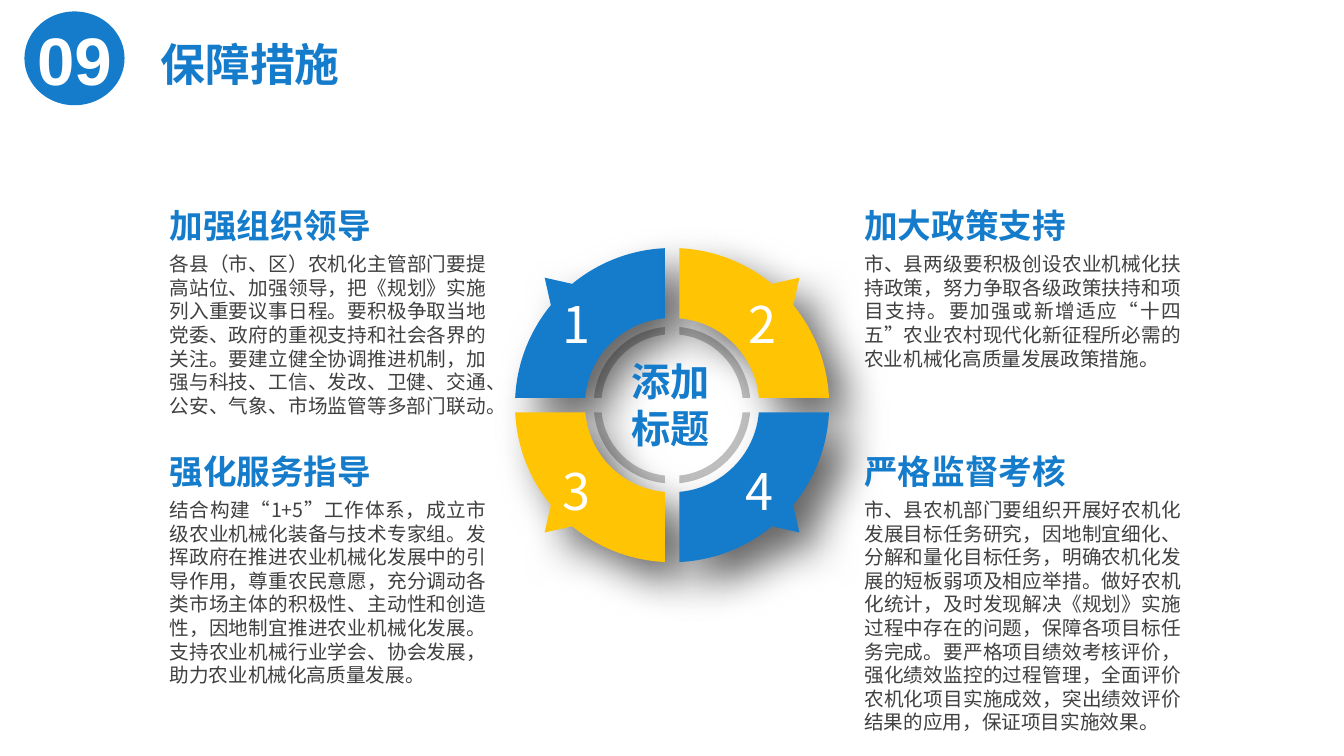
from math import acos, asin, cos, radians, sin, tan

from lxml import etree
from pptx import Presentation
from pptx import util as u
from pptx.dml.color import RGBColor
from pptx.enum import shapes, text
from pptx.oxml import ns

BLUE = RGBColor(0x15, 0x7C, 0xCB)
YELLOW = RGBColor(0xFF, 0xC4, 0x04)
GREY = RGBColor(0xBF, 0xBF, 0xBF)
INK = RGBColor(0x40, 0x40, 0x40)
WHITE = RGBColor(0xFF, 0xFF, 0xFF)
CJK = "Noto Sans CJK SC"

CENTRE_X, CENTRE_Y = 480.1, 289.4
HALF_GAP = 5.2


def write(tf, words, size, color, font=CJK, bold=False, align=text.PP_ALIGN.LEFT,
          anchor=text.MSO_ANCHOR.TOP, wrap=True, insets=(7.2, 3.6)):
    """Put one formatted paragraph into a text frame."""
    tf.word_wrap = wrap
    tf.auto_size = text.MSO_AUTO_SIZE.NONE
    tf.vertical_anchor = anchor
    tf.margin_left = tf.margin_right = u.Pt(insets[0])
    tf.margin_top = tf.margin_bottom = u.Pt(insets[1])
    p = tf.paragraphs[0]
    p.alignment = align
    p.line_spacing = u.Pt(round(size * 1.204, 2))
    r = p.add_run()
    r.text = words
    r.font.name, r.font.size, r.font.bold = font, u.Pt(size), bold
    r.font.color.rgb = color
    ea = etree.SubElement(r.font._element, ns.qn("a:ea"))
    ea.set("typeface", font)


def quarter(sx, sy, outer, inner, tip=None):
    """Steps of one ring quarter: one point is a line, three points are a curve."""
    def on(radius, angle):
        return radius * cos(angle), radius * sin(angle)

    def arc(radius, start, end):
        k = 4 / 3 * tan((end - start) / 4)
        (x1, y1), (x2, y2) = on(radius, start), on(radius, end)
        return [(x1 - k * y1, y1 + k * x1), (x2 + k * y2, y2 - k * x2), (x2, y2)]

    first, last = asin(HALF_GAP / outer), acos(HALF_GAP / outer)
    steps = [[on(outer, first)]]
    if tip:
        low, high = radians(39.5), radians(50.5)
        steps += [arc(outer, first, low), [(tip, tip)], [on(outer, high)],
                  arc(outer, high, last)]
    else:
        steps.append(arc(outer, first, last))
    first, last = asin(HALF_GAP / inner), acos(HALF_GAP / inner)
    steps += [[on(inner, last)], arc(inner, last, first)]
    return [[(u.Pt(CENTRE_X + sx * x), u.Pt(CENTRE_Y + sy * y)) for x, y in step]
            for step in steps]


class Deck:
    def __init__(self, prs, s):
        self.prs, self.s = prs, s

    def paint(self, sp, color):
        sp.fill.solid()
        sp.fill.fore_color.rgb = color
        sp.line.fill.background()
        sp.shadow.inherit = False

    def shape(self, kind, x, y, w, h, color):
        sp = self.s.shapes.add_shape(kind, *map(u.Pt, (x, y, w, h)))
        self.paint(sp, color)
        return sp

    def title(self, words, x, y, w, h):
        sp = self.s.shapes.title
        sp.left, sp.top, sp.width, sp.height = map(u.Pt, (x, y, w, h))
        write(sp.text_frame, words, 32, BLUE, bold=True)

    def label(self, words, x, y, w, h, size, color, **fmt):
        sp = self.s.shapes.add_textbox(*map(u.Pt, (x, y, w, h)))
        write(sp.text_frame, words, size, color, **fmt)

    def panel(self, x, y, w, h):
        sp = self.shape(shapes.MSO_SHAPE.RECTANGLE, x, y, w, h, WHITE)
        white = sp._element.spPr.find(".//" + ns.qn("a:srgbClr"))
        etree.SubElement(white, ns.qn("a:alpha"), val="88000")

    def badge(self, words, x, y, w, h):
        sp = self.shape(shapes.MSO_SHAPE.OVAL, x, y, w, h, BLUE)
        write(sp.text_frame, words, 48, WHITE, font="Arial", bold=True, wrap=False,
              align=text.PP_ALIGN.CENTER, anchor=text.MSO_ANCHOR.MIDDLE, insets=(0, 0))

    def outline(self, contours, color):
        builder = self.s.shapes.build_freeform(*contours[0][0][0])
        for i, steps in enumerate(contours):
            if i:
                builder.move_to(*steps[0][0])
            builder.add_line_segments([pt for step in steps[1:] for pt in step], close=True)
        sp = builder.convert_to_shape()
        self.paint(sp, color)
        # Join each run of three points into a curve
        lines = iter(list(sp._element.spPr.iter(ns.qn("a:lnTo"))))
        for step in (step for steps in contours for step in steps[1:]):
            group = [next(lines) for _ in step]
            if len(group) == 3:
                group[0].tag = ns.qn("a:cubicBezTo")
                for line in group[1:]:
                    group[0].append(line[0])
                    line.getparent().remove(line)
        return sp

    def cast_shadow(self, sp):
        effects = sp._element.spPr.find(ns.qn("a:effectLst"))
        shadow = etree.SubElement(effects, ns.qn("a:outerShdw"), blurRad=str(u.Pt(30)),
                                  dist=str(u.Pt(20)), dir="2700000", algn="tl",
                                  rotWithShape="0")
        black = etree.SubElement(shadow, ns.qn("a:srgbClr"), val="000000")
        etree.SubElement(black, ns.qn("a:alpha"), val="60000")


# Side of the ring (sx, sy), colour, number with its left edge, heading, body with its height
MEASURES = [
    (-1, -1, BLUE, "1", 396, "加强组织领导", 126,
     "各县（市、区）农机化主管部门要提高站位、加强领导，把《规划》实施列入重要议事日程。"
     "要积极争取当地党委、政府的重视支持和社会各界的关注。要建立健全协调推进机制，"
     "加强与科技、工信、发改、卫健、交通、公安、气象、市场监管等多部门联动。"),
    (1, -1, YELLOW, "2", 529, "加大政策支持", 92,
     "市、县两级要积极创设农业机械化扶持政策，努力争取各级政策扶持和项目支持。"
     "要加强或新增适应“十四五”农业农村现代化新征程所必需的农业机械化高质量发展政策措施。"),
    (-1, 1, YELLOW, "3", 396, "强化服务指导", 142.6,
     "结合构建“1+5”工作体系，成立市级农业机械化装备与技术专家组。"
     "发挥政府在推进农业机械化发展中的引导作用，尊重农民意愿，充分调动各类市场主体的积极性、"
     "主动性和创造性，因地制宜推进农业机械化发展。支持农业机械行业学会、协会发展，"
     "助力农业机械化高质量发展。"),
    (1, 1, BLUE, "4", 526.8, "严格监督考核", 177,
     "市、县农机部门要组织开展好农机化发展目标任务研究，因地制宜细化、分解和量化目标任务，"
     "明确农机化发展的短板弱项及相应举措。做好农机化统计，及时发现解决《规划》实施过程中存在的问题，"
     "保障各项目标任务完成。要严格项目绩效考核评价，强化绩效监控的过程管理，"
     "全面评价农机化项目实施成效，突出绩效评价结果的应用，保证项目实施效果。"),
]


def main():
    prs = Presentation()
    prs.slide_width, prs.slide_height = u.Pt(960), u.Pt(540)
    deck = Deck(prs, prs.slides.add_slide(prs.slide_layouts[5]))

    # Pale panel behind the content
    deck.panel(0, 118.8, 960, 421.2)

    # Inner ring, then the four pointed quarters
    deck.outline([quarter(sx, sy, 56, 50.6) for sx, sy, *_ in MEASURES], GREY)
    for sx, sy, color, *_ in sorted(MEASURES, key=lambda measure: measure[0]):
        deck.cast_shadow(deck.outline([quarter(sx, sy, 112.2, 62.2, tip=91)], color))
    deck.label("添加标题", 435.6, 251.5, 86.4, 75, 28, BLUE, bold=True,
               align=text.PP_ALIGN.CENTER)

    # Numbers and text blocks
    for sx, sy, _, number, number_x, heading, height, body in MEASURES:
        deck.label(number, number_x, 206 if sy < 0 else 325.2, 33, 50, 36, WHITE,
                   anchor=text.MSO_ANCHOR.MIDDLE, wrap=False, insets=(5.8, 2.9))
        x = 114 if sx < 0 else 610.3
        y = 142.6 if sy < 0 else 318.2
        deck.label(heading, x, y, 240.5, 36, 24, BLUE, bold=True)
        deck.label(body, x, y + 33.8, 240.5, height, 14, INK,
                   align=text.PP_ALIGN.JUSTIFY)

    # Header
    deck.badge("09", 17.5, 8.2, 71.5, 67)
    deck.title("保障措施", 107.5, 22.2, 505.5, 46)

    prs.save("out.pptx")


if __name__ == "__main__":
    main()
